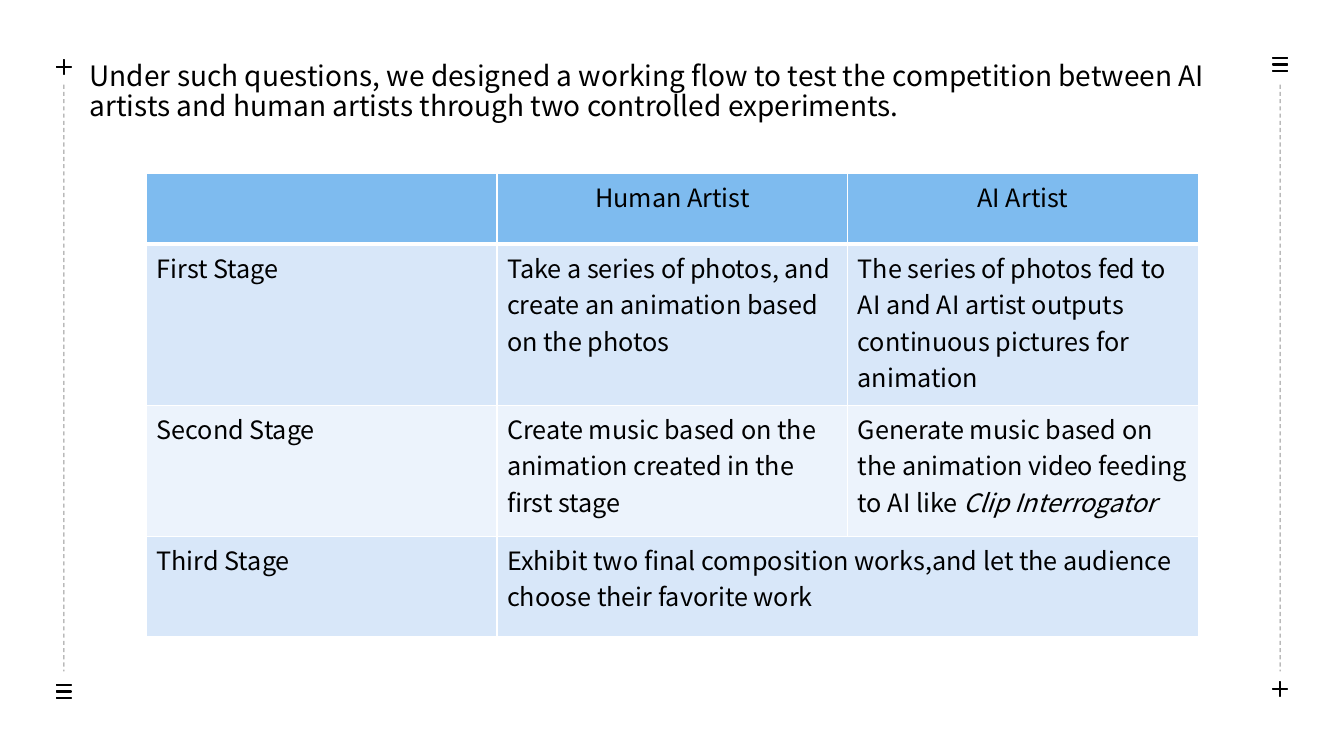
from dataclasses import dataclass

from lxml.etree import SubElement
from pptx import Presentation
from pptx.dml.color import RGBColor
from pptx.enum.dml import MSO_LINE_DASH_STYLE as Dash
from pptx.enum.shapes import MSO_CONNECTOR as Connector, MSO_SHAPE as Preset
from pptx.enum.text import MSO_ANCHOR as Anchor, PP_ALIGN as Align
from pptx.oxml.ns import qn
from pptx.util import Emu, Inches, Pt

BLACK = RGBColor(0x00, 0x00, 0x00)
WHITE = RGBColor(0xFF, 0xFF, 0xFF)
HEADER_BLUE = RGBColor(0x7E, 0xBB, 0xEF)
STAGE_BLUE = RGBColor(0xD8, 0xE7, 0xF9)
STAGE_PALE = RGBColor(0xEC, 0xF3, 0xFC)
FONT = "Noto Sans CJK SC"
WIDTH, HEIGHT = Inches(13.33), Inches(7.5)


@dataclass(frozen=True)
class Rail:
    x: float
    plus_y: float
    menu_y: float


@dataclass(frozen=True)
class Stage:
    cells: tuple[str, ...]
    height: float
    fill: RGBColor
    align: Align = Align.LEFT
    title_in_italics: str = ""


RAILS = (Rail(95.25, 91.13, 8.53), Rail(4.75, 8.87, 91.47))
STAGES = (
    Stage(("", "Human Artist", "AI Artist"), 9.33, HEADER_BLUE, Align.CENTER),
    Stage(("First Stage",
           "Take a series of photos, and create an animation based on the photos",
           "The series of photos fed to AI and AI artist outputs continuous pictures for animation"),
          21.33, STAGE_BLUE),
    Stage(("Second Stage",
           "Create music based on the animation created in the first stage",
           "Generate music based on the animation video feeding to AI like "),
          17.33, STAGE_PALE, title_in_italics="Clip Interrogator"),
    Stage(("Third Stage",
           "Exhibit two final composition works,and let the audience choose their favorite work"),
          13.33, STAGE_BLUE),
)


def across(percent: float) -> Emu:
    return Emu(round(WIDTH * percent / 100))


def down(percent: float) -> Emu:
    return Emu(round(HEIGHT * percent / 100))


def write(paragraph, text: str, *, size: float = 18, italic: bool = False,
          align: Align = Align.LEFT, spacing: float = 1.0) -> None:
    paragraph.alignment = align
    paragraph.line_spacing = spacing
    run = paragraph.add_run()
    run.text = text
    font = run.font
    font.name, font.size, font.bold, font.italic = FONT, Pt(size), False, italic
    font.color.rgb = BLACK
    SubElement(font._element, qn("a:ea"), typeface=FONT)


def ink(shape) -> None:
    shape.shadow.inherit = False
    shape.fill.solid()
    shape.fill.fore_color.rgb = BLACK
    shape.line.color.rgb = BLACK
    shape.line.width = Pt(1)


def draw_menu(shapes, x: float, y: float) -> None:
    half_width, half_bar, step = across(0.53), down(0.07), down(0.85)
    left, right = across(x) - half_width, across(x) + half_width
    builder = None
    for bar in (-1, 0, 1):
        top = down(y) + bar * step - half_bar
        bottom = top + 2 * half_bar
        if builder is None:
            builder = shapes.build_freeform(left, top)
        else:
            builder.move_to(left, top)
        builder.add_line_segments([(right, top), (right, bottom), (left, bottom)], close=True)
    ink(builder.convert_to_shape())


def draw_rail(shapes, rail: Rail) -> None:
    draw_menu(shapes, rail.x, rail.menu_y)
    side = across(1.43)
    plus = shapes.add_shape(Preset.MATH_PLUS, across(rail.x) - side // 2,
                            down(rail.plus_y) - side // 2, side, side)
    plus.adjustments[0] = 0.05
    ink(plus)
    dashes = shapes.add_connector(Connector.STRAIGHT, across(rail.x), down(11.2),
                                  across(rail.x), down(88.8))
    dashes.line.color.rgb = BLACK
    dashes.line.width = Pt(0.75)
    dashes.line.dash_style = Dash.DASH
    properties = dashes._element.spPr
    SubElement(properties.find(".//" + qn("a:srgbClr")), qn("a:alpha"), val="41000")
    SubElement(properties, qn("a:effectLst"))


def draw_heading(shapes) -> None:
    frame = shapes.add_textbox(across(5.93), down(7.6), across(87.15), down(12.53)).text_frame
    frame.word_wrap = True
    frame.vertical_anchor = Anchor.TOP
    write(frame.paragraphs[0],
          "Under such questions, we designed a working flow to test the competition between "
          "AI artists and human artists through two controlled experiments.",
          size=20, spacing=0.9)


def set_borders(cell, row: int) -> None:
    heavy = {0: "B", 1: "T"}.get(row)
    for edge in "LRTB":
        border = SubElement(cell._tc.get_or_add_tcPr(), qn(f"a:ln{edge}"),
                            w=str(Pt(3 if edge == heavy else 1)))
        paint = SubElement(border, qn("a:solidFill"))
        SubElement(paint, qn("a:srgbClr"), val=str(WHITE))


def draw_stages(shapes) -> None:
    columns = len(STAGES[0].cells)
    table = shapes.add_table(len(STAGES), columns, across(10.9), down(22.93), across(78.25),
                             down(sum(stage.height for stage in STAGES))).table
    for row, stage in enumerate(STAGES):
        table.rows[row].height = down(stage.height)
        for column in range(columns):
            cell = table.cell(row, column)
            set_borders(cell, row)
            cell.fill.solid()
            cell.fill.fore_color.rgb = stage.fill
        for column, text in enumerate(stage.cells):
            write(table.cell(row, column).text_frame.paragraphs[0], text, align=stage.align)
        if stage.title_in_italics:
            write(table.cell(row, columns - 1).text_frame.paragraphs[0],
                  stage.title_in_italics, italic=True)
        if len(stage.cells) < columns:
            table.cell(row, len(stage.cells) - 1).merge(table.cell(row, columns - 1))


def main() -> None:
    deck = Presentation()
    deck.slide_width, deck.slide_height = WIDTH, HEIGHT
    shapes = deck.slides.add_slide(deck.slide_layouts[6]).shapes
    for rail in RAILS:
        draw_rail(shapes, rail)
    draw_heading(shapes)
    draw_stages(shapes)
    deck.save("out.pptx")


if __name__ == "__main__":
    main()
